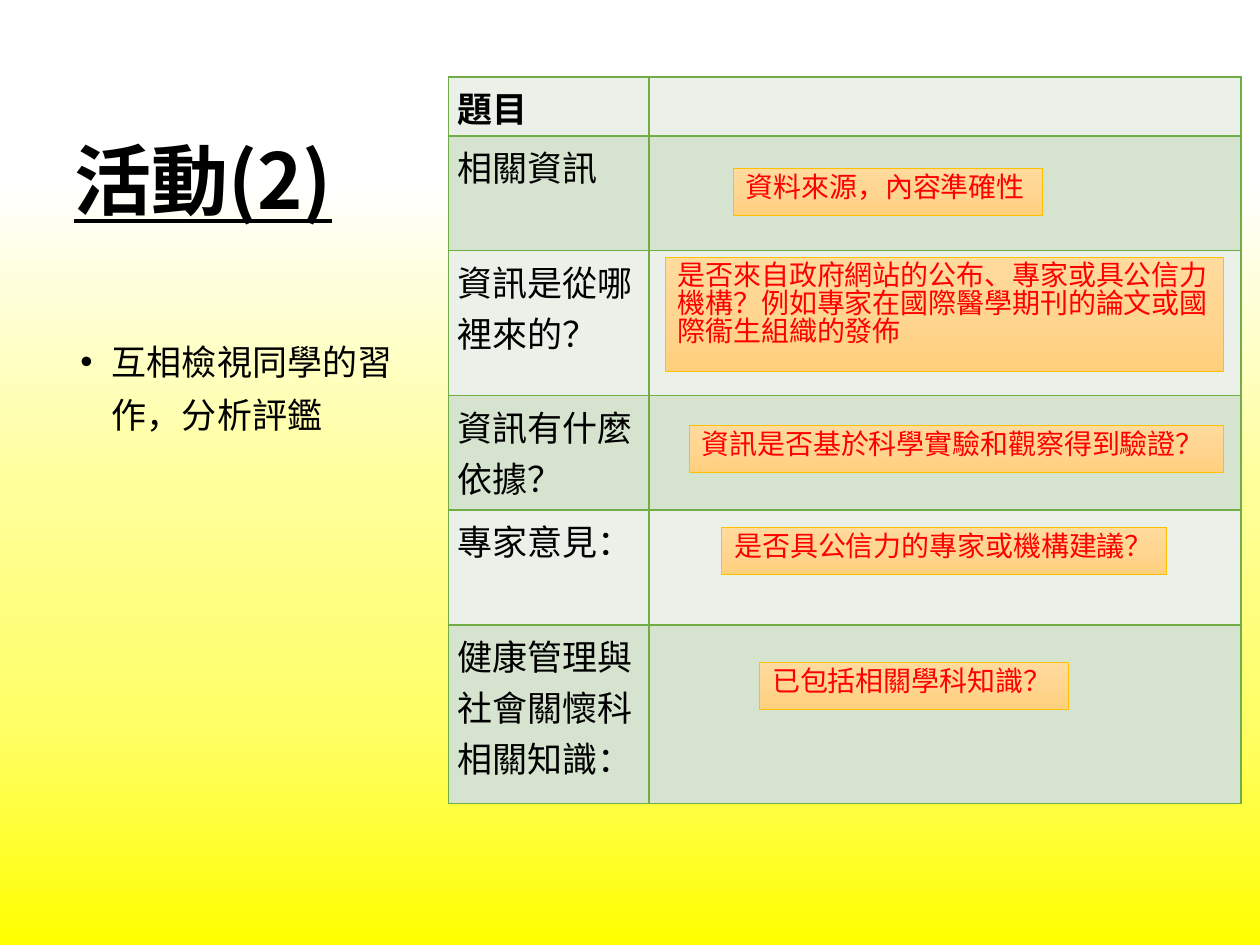
from lxml.etree import SubElement as Sub
from pptx import Presentation
from pptx.dml.color import RGBColor as RGB
from pptx.enum.shapes import MSO_SHAPE as SHAPE
from pptx.enum.text import MSO_ANCHOR as ANCHOR, PP_ALIGN as ALIGN
from pptx.oxml.ns import qn
from pptx.util import Inches, Pt

FONT = "Noto Sans CJK SC"
C = {"text": "000000", "note": "FF0000", "note_line": "FFC000", "border": "70AD47",
     "light": "EBF1E9", "dark": "D5E3CF"}
PAGE_STOPS = [(19, "FFFFFF"), (52, "FFFF99"), (77, "FFFF66"), (100, "FFFF00")]
NOTE_STOPS = [(0, "FFDB9E"), (50, "FFD590"), (100, "FFD07C")]

prs = Presentation()
prs.slide_width, prs.slide_height = Inches(10), Inches(7.5)
U = prs.slide_width / 100
s = prs.slides.add_slide(prs.slide_layouts[6])


def add_run(p, text, size, color, bold=False):
    r = p.add_run()
    r.text = text
    r.font.size, r.font.bold, r.font.name = Pt(size), bold, FONT
    r.font.color.rgb = RGB.from_string(C[color])
    Sub(r.font._element, qn("a:ea"), typeface=FONT)
    return r


def set_gradient(fill, element, stops):
    fill.gradient()
    fill.gradient_angle = 270
    gs_list = element.find(".//" + qn("a:gsLst"))
    gs_list.clear()
    for pos, color in stops:
        gs = Sub(gs_list, qn("a:gs"), pos=str(pos * 1000))
        Sub(gs, qn("a:srgbClr"), val=color)


set_gradient(s.background.fill, s.element, PAGE_STOPS)

tf = s.shapes.add_textbox(*[int(v * U) for v in (4.9, 7.4, 26.5, 14.5)]).text_frame
tf.word_wrap, tf.vertical_anchor = True, ANCHOR.MIDDLE
p = tf.paragraphs[0]
p.line_spacing = 0.9
add_run(p, "活動(2)", 44, "text", True).font.underline = True

tf = s.shapes.add_textbox(*[int(v * U) for v in (5.4, 19.5, 28, 41.8)]).text_frame
tf.word_wrap, tf.margin_top = True, int(6.7 * U)
p = tf.paragraphs[0]
p.line_spacing = 1.25
pPr = p._p.get_or_add_pPr()
pPr.set("marL", str(int(2.5 * U)))
pPr.set("indent", str(int(-2.5 * U)))
Sub(pPr, qn("a:buFont"), typeface="Arial")
Sub(pPr, qn("a:buChar"), char="•")
add_run(p, "互相檢視同學的習作，分析評鑑", 20, "text")

rows = [("題目", 4.7), ("相關資訊", 9.1), ("資訊是從哪裡來的？", 11.5),
        ("資訊有什麼依據？", 9.1), ("專家意見：", 9.1),
        ("健康管理與社會關懷科相關知識：", 14.2)]
cols = [15.9, 47]
tbl = s.shapes.add_table(len(rows), len(cols), *[
    int(v * U) for v in (35.6, 6.1, sum(cols), sum(h for _, h in rows))]).table
tbl.first_row = tbl.horz_banding = False
for col, width in zip(tbl.columns, cols):
    col.width = int(width * U)
for i, (text, height) in enumerate(rows):
    tbl.rows[i].height = int(height * U)
    for cell in tbl.rows[i].cells:
        cell.margin_left = cell.margin_right = int(0.7 * U)
        cell.margin_top = cell.margin_bottom = int(0.4 * U)
        cell.fill.solid()
        cell.fill.fore_color.rgb = RGB.from_string(C["dark" if i % 2 else "light"])
        tcPr = cell._tc.get_or_add_tcPr()
        for k, side in enumerate(("lnL", "lnR", "lnT", "lnB")):
            ln = Sub(tcPr, qn("a:" + side), w=str(Pt(1)))
            Sub(Sub(ln, qn("a:solidFill")), qn("a:srgbClr"), val=C["border"])
            tcPr.insert(k, ln)
    add_run(tbl.cell(i, 0).text_frame.paragraphs[0], text, 20, "text", i == 0)

notes = [
    ("資料來源，內容準確性", 58.2, 13.4, 24.5, 3.7),
    ("是否具公信力的專家或機構建議？", 57.3, 41.9, 35.3, 3.7),
    ("資訊是否基於科學實驗和觀察得到驗證？", 54.7, 33.8, 42.4, 3.7),
    ("已包括相關學科知識？", 60.3, 52.6, 24.5, 3.7),
    ("是否來自政府網站的公布、專家或具公信力機構？例如專家在國際醫學期刊的論文"
     "或國際衞生組織的發佈", 52.8, 20.4, 44.3, 9.1),
]
for text, *box in notes:
    sp = s.shapes.add_shape(SHAPE.RECTANGLE, *[int(v * U) for v in box])
    sp.shadow.inherit = False
    set_gradient(sp.fill, sp.element, NOTE_STOPS)
    sp.line.color.rgb, sp.line.width = RGB.from_string(C["note_line"]), Pt(0.5)
    tf = sp.text_frame
    tf.word_wrap, tf.vertical_anchor = box[3] > 5, ANCHOR.TOP
    p = tf.paragraphs[0]
    p.alignment, p.line_spacing = ALIGN.LEFT, 0.83
    add_run(p, text, 16, "note")

prs.save("out.pptx")
